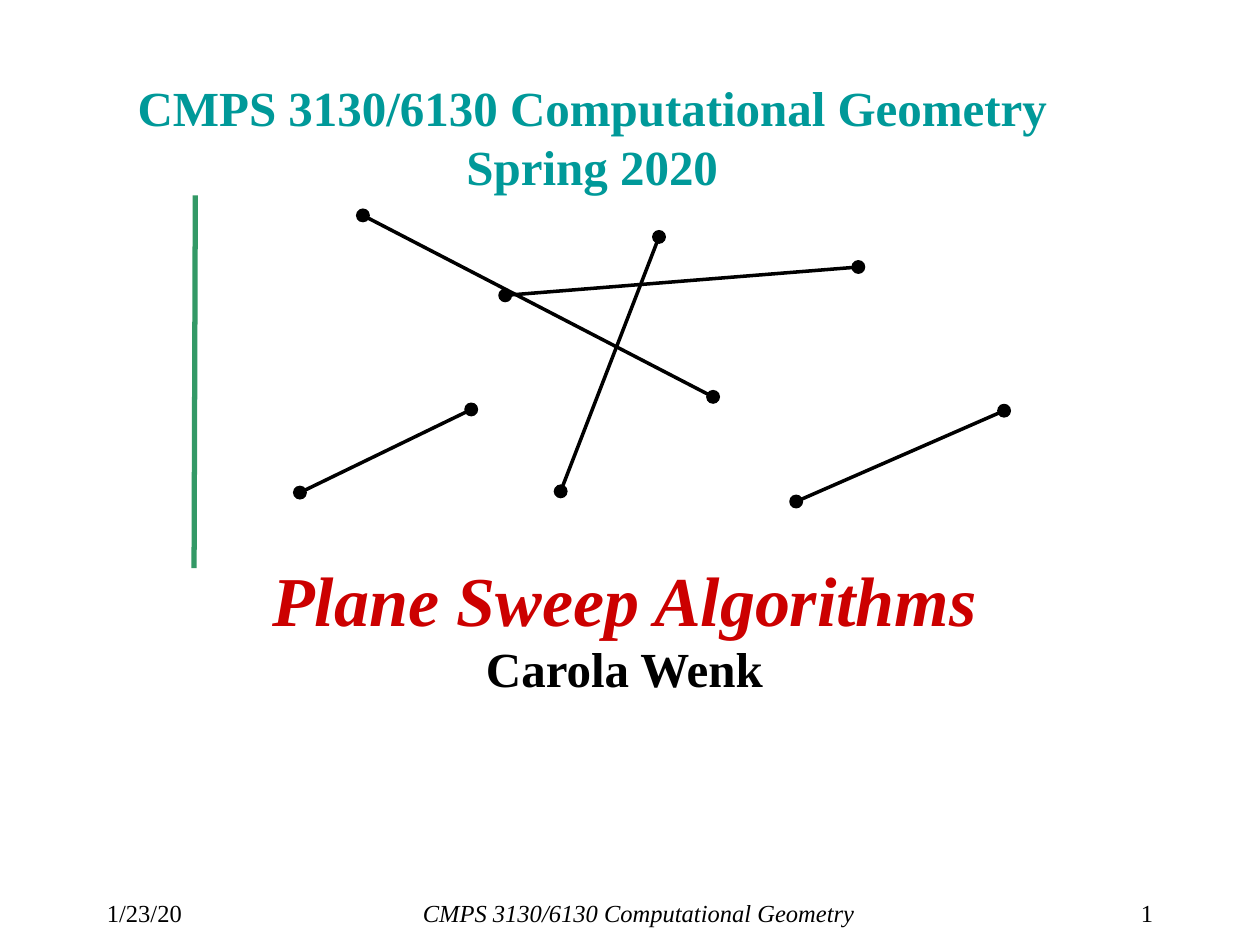
from lxml import etree
from pptx import Presentation
from pptx.dml.color import RGBColor
from pptx.enum.shapes import MSO_CONNECTOR, MSO_SHAPE
from pptx.enum.text import MSO_ANCHOR, PP_ALIGN
from pptx.oxml.ns import qn
from pptx.util import Pt

LEFT, CENTER, RIGHT = PP_ALIGN.LEFT, PP_ALIGN.CENTER, PP_ALIGN.RIGHT
TOP, MIDDLE = MSO_ANCHOR.TOP, MSO_ANCHOR.MIDDLE
STRAIGHT, OVAL = MSO_CONNECTOR.STRAIGHT, MSO_SHAPE.OVAL

FONT = "Times New Roman"
COLORS = {"black": "000000", "teal": "009999", "red": "CC0000", "green": "339966"}
DOT = 7.2  # diameter of an endpoint

# Paragraph: text, size, color, bold, italic, line spacing, space before
# Text block: box (left, top, width, height), alignment, anchor, paragraphs
TEXTS = [
    ((54, 509.8, 68.4, 18), LEFT, TOP,
     [("1/23/20", 14, "black", False, False, 1, 0)]),
    ((136.8, 509.8, 456.5, 18), CENTER, TOP,
     [("CMPS 3130/6130 Computational Geometry", 14, "black", False, True, 1, 0)]),
    ((607, 509.8, 59, 18), RIGHT, TOP,
     [("1", 14, "black", False, False, 1, 0)]),
    ((17.3, 38.9, 642.2, 77.8), CENTER, MIDDLE,
     [("CMPS 3130/6130 Computational Geometry\vSpring 2020",
       28, "teal", True, False, 1, 0)]),
    ((23.8, 324, 666, 120.2), CENTER, TOP,
     [("Plane Sweep Algorithms", 40, "red", True, True, 0.8, 8),
      ("Carola Wenk", 28, "black", True, False, 0.8, 5.6)]),
]

# Segments of the plane sweep: start and end points
SEGMENTS = [
    ((171.4, 281.5), (269.3, 234)),
    ((207.4, 123.1), (407.5, 226.8)),
    ((320.4, 280.8), (376.6, 135.4)),
    ((288.7, 168.8), (490.5, 152.6)),
    ((455, 286.6), (573.8, 234.7)),
]
SWEEP_LINE = ((111.6, 111.6), (110.9, 324.7))


def rgb(name):
    return RGBColor.from_string(COLORS[name])


def add_text(s, box, align, anchor, paragraphs):
    tf = s.shapes.add_textbox(*map(Pt, box)).text_frame
    tf.word_wrap = True
    tf.vertical_anchor = anchor
    for i, (text, size, color, bold, italic, spacing, before) in enumerate(paragraphs):
        p = tf.add_paragraph() if i else tf.paragraphs[0]
        p.alignment = align
        p.line_spacing = spacing
        p.space_before = Pt(before)
        for j, line in enumerate(text.split("\v")):
            if j:
                p.add_line_break()
            r = p.add_run()
            r.text = line
            r.font.name, r.font.size = FONT, Pt(size)
            r.font.bold, r.font.italic = bold, italic
            r.font.color.rgb = rgb(color)


def add_line(s, start, end, color, width):
    line = s.shapes.add_connector(STRAIGHT, *map(Pt, start + end))
    line.line.color.rgb = rgb(color)
    line.line.width = Pt(width)
    etree.SubElement(line._element.spPr, qn("a:effectLst"))


def add_dot(s, center):
    x, y = center
    dot = s.shapes.add_shape(OVAL, Pt(x - DOT / 2), Pt(y - DOT / 2), Pt(DOT), Pt(DOT))
    dot.shadow.inherit = False
    dot.fill.solid()
    dot.fill.fore_color.rgb = rgb("black")
    dot.line.color.rgb = rgb("black")
    dot.line.width = Pt(0.75)


def main():
    prs = Presentation()
    prs.slide_width, prs.slide_height = Pt(720), Pt(540)
    s = prs.slides.add_slide(prs.slide_layouts[6])

    # Footer, title and subtitle
    for block in TEXTS:
        add_text(s, *block)

    # Endpoints, then the sweep line and the segments
    for segment in SEGMENTS:
        for point in segment:
            add_dot(s, point)
    add_line(s, *SWEEP_LINE, "green", 3)
    for start, end in SEGMENTS:
        add_line(s, start, end, "black", 2)

    prs.save("out.pptx")


if __name__ == "__main__":
    main()
